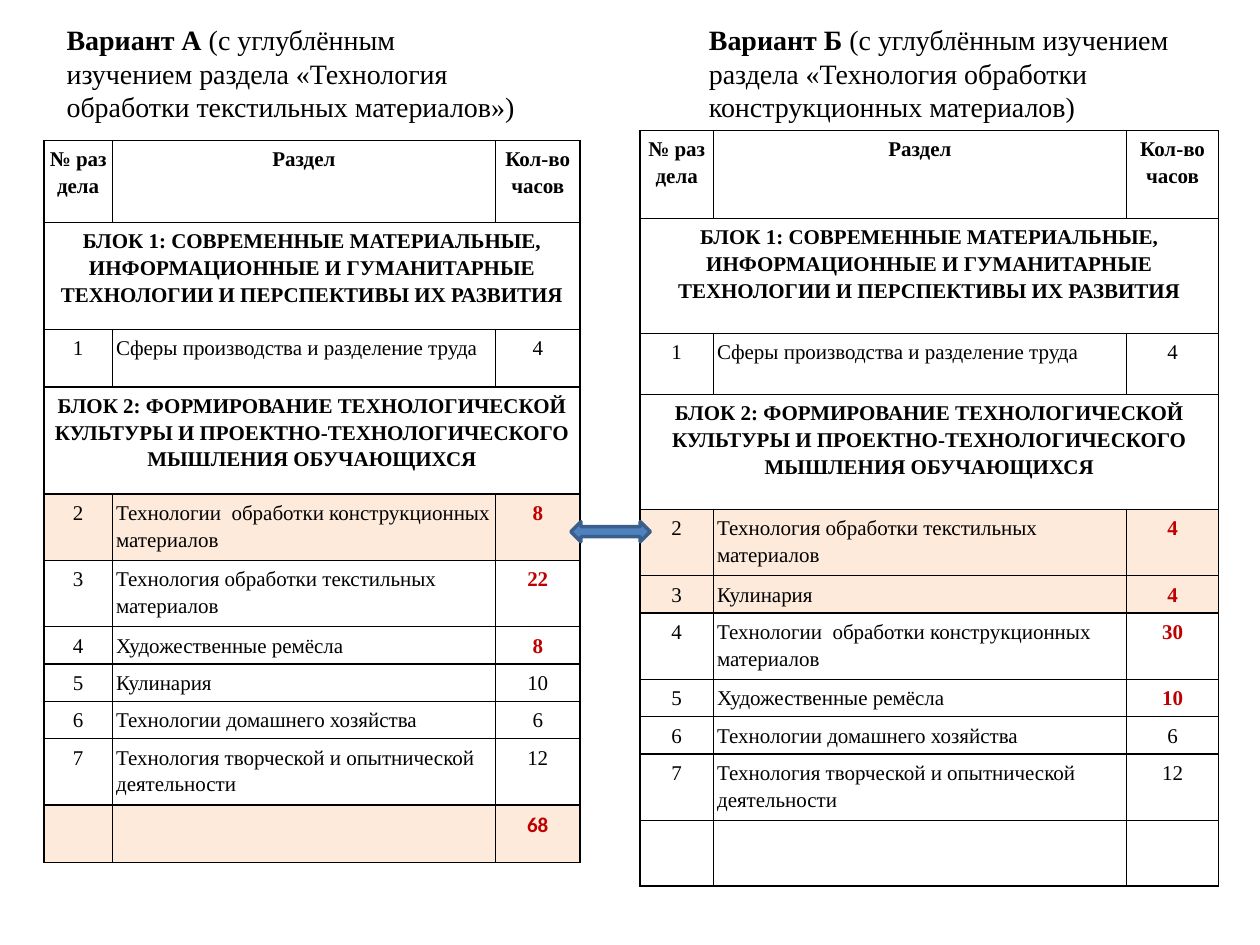
from lxml.etree import SubElement as Sub
from pptx import Presentation
from pptx.dml.color import RGBColor as Rgb
from pptx.enum.shapes import MSO_SHAPE as Kind
from pptx.enum.text import MSO_AUTO_SIZE as Fit, PP_ALIGN as Align
from pptx.oxml.ns import qn
from pptx.util import Pt

INK = {"text": "000000", "mark": "C00000", "tint": "FDEADA",
       "arrow": "4F81BD", "edge": "3A5F8C"}
ONE, TWO = 21.3, 37.8
HEAD = ("№ раз дела", "Раздел", "Кол-во часов")
BLOCK = ("БЛОК 1: СОВРЕМЕННЫЕ МАТЕРИАЛЬНЫЕ, ИНФОРМАЦИОННЫЕ И ГУМАНИТАРНЫЕ "
         "ТЕХНОЛОГИИ И ПЕРСПЕКТИВЫ ИХ РАЗВИТИЯ",
         "БЛОК 2: ФОРМИРОВАНИЕ ТЕХНОЛОГИЧЕСКОЙ КУЛЬТУРЫ И "
         "ПРОЕКТНО-ТЕХНОЛОГИЧЕСКОГО МЫШЛЕНИЯ ОБУЧАЮЩИХСЯ")
WORK = "Сферы производства и разделение труда"
BUILD = "Технологии  обработки конструкционных материалов"
CLOTH = "Технология обработки текстильных материалов"
CRAFT = "Художественные ремёсла"
COOK = "Кулинария"
HOME = "Технологии домашнего хозяйства"
MAKE = "Технология творческой и опытнической деятельности"


class Deck:
    """Holds the style and the current slide."""

    def __init__(self):
        self.show = Presentation()
        self.show.slide_width, self.show.slide_height = Pt(720), Pt(540)
        self.slide = self.show.slides.add_slide(self.show.slide_layouts[6])
        self.face = "Times New Roman"

    def style(self, font, size, bold=None, ink="text", face=None):
        font.name, font.size, font.bold = face or self.face, Pt(size), bold
        font.color.rgb = Rgb.from_string(INK[ink])

    def label(self, box, lead, rest):
        frame = self.slide.shapes.add_textbox(*map(Pt, box)).text_frame
        frame.word_wrap, frame.auto_size = True, Fit.SHAPE_TO_FIT_TEXT
        para = frame.paragraphs[0]
        self.style(para.font, 16)
        for text, bold in ((lead, True), (rest, False)):
            run = para.add_run()
            run.text, run.font.bold = text, bold

    def edges(self, cell):
        props = cell._tc.get_or_add_tcPr()
        for at, side in enumerate(("lnL", "lnR", "lnT", "lnB")):
            line = props.makeelement(qn("a:" + side), {"w": str(Pt(1))})
            fill = Sub(line, qn("a:solidFill"))
            Sub(fill, qn("a:srgbClr"), val=INK["text"])
            props.insert(at, line)

    def cell(self, cell, text, bold=False, ink="text", left=False, tint=False, face=None):
        cell.margin_left = cell.margin_right = Pt(2.2)
        cell.margin_top = cell.margin_bottom = Pt(2.4)
        if tint:
            cell.fill.solid()
            cell.fill.fore_color.rgb = Rgb.from_string(INK["tint"])
        else:
            cell.fill.background()
        self.edges(cell)
        cell.text = text
        para = cell.text_frame.paragraphs[0]
        para.alignment = Align.LEFT if left else Align.CENTER
        para.line_spacing = 1.15
        self.style(para.font, 12, bold, ink, face)

    def table(self, left, top, cols, highs, rows, tints, marks):
        size = map(Pt, (left, top, sum(cols), sum(highs)))
        grid = self.slide.shapes.add_table(len(rows), len(cols), *size).table
        grid.first_row = grid.horz_banding = False
        for col, wide in zip(grid.columns, cols):
            col.width = Pt(wide)
        for y, (row, high) in enumerate(zip(rows, highs)):
            grid.rows[y].height = Pt(high)
            span = len(row) == 1
            if span:
                grid.cell(y, 0).merge(grid.cell(y, 2))
            for x, text in enumerate(row + ("", "") if span else row):
                mark = x == 2 and row[0] in marks
                self.cell(grid.cell(y, x), text, y == 0 or span or mark,
                          "mark" if mark else "text", x == 1 and y > 0,
                          row[0] in tints,
                          "Calibri" if y == len(rows) - 1 else None)

    def arrow(self, box):
        shape = self.slide.shapes.add_shape(Kind.LEFT_RIGHT_ARROW, *map(Pt, box))
        shape.shadow.inherit = False
        shape.fill.solid()
        shape.fill.fore_color.rgb = Rgb.from_string(INK["arrow"])
        shape.line.color.rgb = Rgb.from_string(INK["edge"])
        shape.line.width = Pt(2)


def plan(parts, total):
    """Return the rows of one variant from its numbered parts."""
    rows = [(str(at), name, str(hours))
            for at, (name, hours) in enumerate([(WORK, 4)] + parts, 1)]
    return [HEAD, BLOCK[:1], rows[0], BLOCK[1:], *rows[1:], ("", "", total)]


def main():
    deck = Deck()
    deck.label((31, 9.4, 272, 65.5), "Вариант А",
               " (с углублённым изучением раздела «Технология обработки "
               "текстильных материалов»)")
    deck.table(25.2, 80.3, (39, 219, 48.3),
               (46.8, 61.2, 32.8, 61.2, TWO, TWO, ONE, ONE, ONE, TWO, 32.8),
               plan([(BUILD, 8), (CLOTH, 22), (CRAFT, 8), (COOK, 10),
                     (HOME, 6), (MAKE, 12)], "68"), "2", "234")
    deck.label((398, 9.4, 309, 65.5), "Вариант Б ",
               "(с углублённым изучением раздела «Технология обработки "
               "конструкционных материалов)")
    deck.table(365.8, 74.6, (41.8, 236.2, 52.5),
               (50.3, 65.6, 35, 65.6, TWO, ONE, TWO, ONE, ONE, TWO, 37.6),
               plan([(CLOTH, 4), (COOK, 4), (BUILD, 30), (CRAFT, 10),
                     (HOME, 6), (MAKE, 12)], ""), ("2", "3"), "2345")
    deck.arrow((326.2, 298.1, 45.4, 11.5))
    deck.show.save("out.pptx")


if __name__ == "__main__":
    main()
